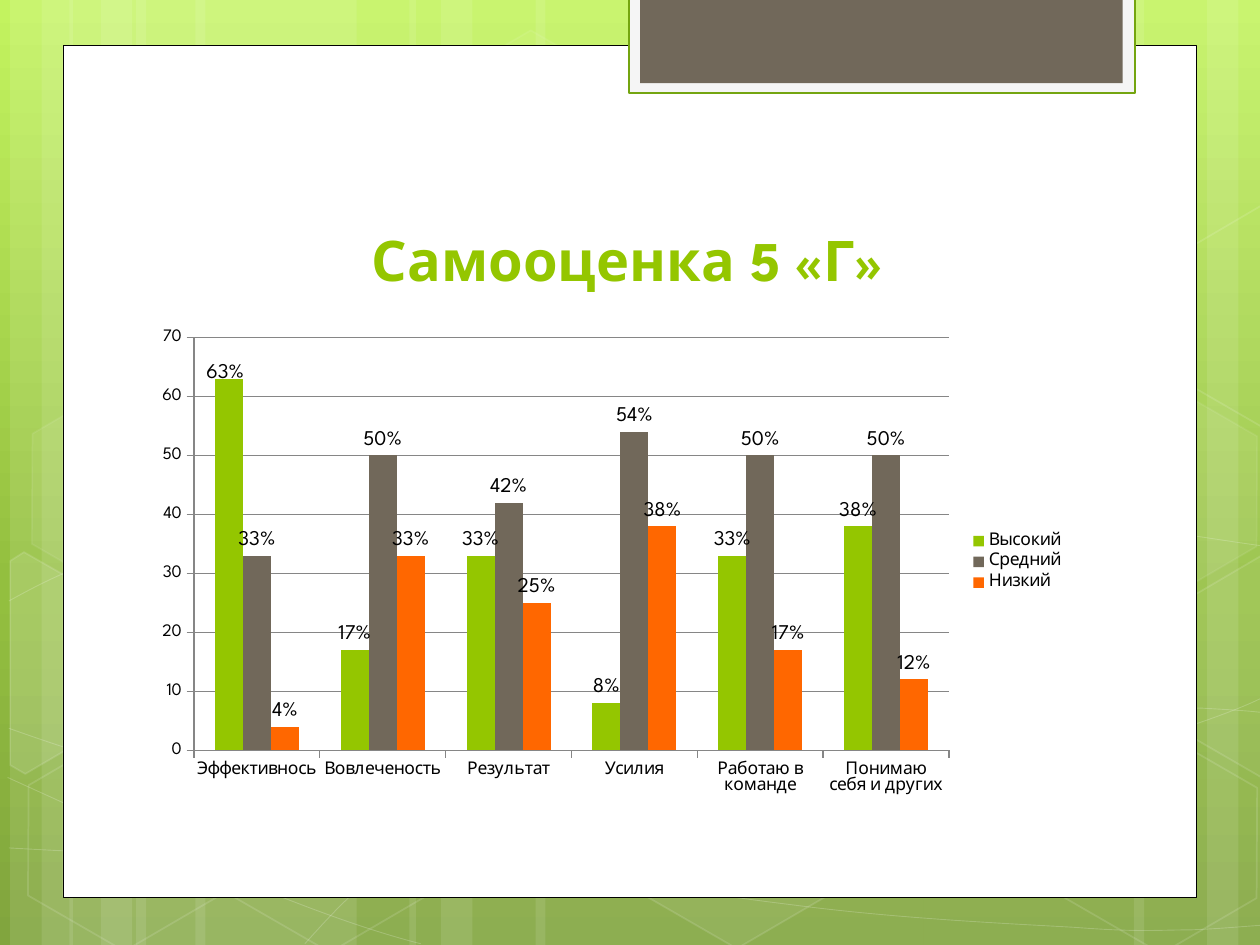
"""Build the class 5 «Г» self-assessment slide with its clustered column chart."""
import dataclasses
import math
import typing

import lxml.etree
import pptx
import pptx.chart.data
import pptx.dml.color
import pptx.enum.chart
import pptx.enum.shapes
import pptx.enum.text
import pptx.oxml.ns
import pptx.util

Inches = pptx.util.Inches
RGBColor = pptx.dml.color.RGBColor
ShapeKind = pptx.enum.shapes.MSO_SHAPE
qn = pptx.oxml.ns.qn

WHITE = RGBColor(0xFF, 0xFF, 0xFF)
BLACK = RGBColor(0, 0, 0)
GREEN = RGBColor(0x94, 0xC6, 0x00)
BROWN = RGBColor(0x71, 0x68, 0x5A)
ORANGE = RGBColor(0xFF, 0x67, 0x00)
FRAME_GREY = RGBColor(0xF5, 0xF5, 0xF5)
FRAME_GREEN = RGBColor(0x74, 0xA5, 0x10)
GRID_GREY = RGBColor(0x86, 0x86, 0x86)
BACKGROUND_STOPS = [(0, RGBColor(0xC3, 0xF3, 0x5F)), (62, RGBColor(0x93, 0xBF, 0x3F)), (100, RGBColor(0x81, 0xA5, 0x3E))]
FONT = "League Spartan"
TILT = 30
Point = tuple[float, float]


@dataclasses.dataclass(frozen=True)
class Style:
    fill: typing.Optional[RGBColor] = None
    fill_alpha: int = 100
    line: typing.Optional[RGBColor] = None
    line_width: float = 1
    line_alpha: int = 100


@dataclasses.dataclass(frozen=True)
class Hexagon:
    left: float
    top: float
    fill_alpha: int
    line_alpha: int


@dataclasses.dataclass(frozen=True)
class Cutoff:
    centre: Point
    points: list[Point]
    fill_alpha: int


@dataclasses.dataclass(frozen=True)
class Level:
    name: str
    values: list[int]
    colour: RGBColor


STRIPES = [(1.08, 1.75), (0.08, 0.5), (0.33, 0.83), (1.55, 1.75), (0.55, 0.5), (0.8, 0.83),
           (7.33, 1.75), (9.58, 0.5), (9, 0.83), (4.25, 3.08), (3.25, 0.5), (3.5, 0.83)]
CURVES = [
    [(0.07, 6.73), (0.61, 6.76), (1.15, 6.79), (1.9, 6.78), (2.65, 6.77), (3.58, 6.75), (4.58, 6.65),
     (5.58, 6.55), (7, 6.36), (7.92, 6.17), (8.83, 5.98), (9.77, 5.68), (10.07, 5.51)],
    [(0.07, 4.77), (0.36, 4.61), (0.65, 4.46), (1.21, 4.31), (1.78, 4.16), (2.59, 3.94), (3.47, 3.87),
     (4.36, 3.8), (5.44, 3.79), (6.54, 3.87), (7.64, 3.95), (9.47, 4.26), (10.07, 4.34)],
    [(0.06, 6.17), (1.27, 6.72), (2.47, 7.27), (3.34, 7.49)],
    [(0.07, 5.78), (0.38, 5.89), (0.7, 6), (1.28, 6.16), (1.86, 6.31), (2.73, 6.56), (3.57, 6.73),
     (4.4, 6.9), (5.45, 7.08), (6.28, 7.18), (7.11, 7.29), (8, 7.33), (8.53, 7.36),
     (9.05, 7.4), (9.19, 7.38), (9.45, 7.38), (9.71, 7.37), (9.89, 7.35), (10.07, 7.34)],
    [(2.42, 7.49), (2.6, 7.29), (2.78, 7.09), (3.02, 6.91), (3.26, 6.73), (3.6, 6.53), (3.88, 6.39),
     (4.16, 6.25), (4.33, 6.19), (4.7, 6.09), (5.06, 5.99), (5.73, 5.85), (6.08, 5.78),
     (6.44, 5.71), (6.49, 5.71), (6.8, 5.69), (7.11, 5.66), (7.6, 5.63), (7.94, 5.62),
     (8.29, 5.61), (8.86, 5.62), (8.86, 5.62), (9.08, 5.62), (9.31, 5.62), (9.53, 5.62),
     (9.71, 5.63), (9.88, 5.64), (9.97, 5.65), (10.06, 5.66), (10.03, 5.65), (10.06, 5.66)],
]
HEXAGONS = [
    Hexagon(3.34, 0.36, 4, 8), Hexagon(4.97, 5.89, 6, 12), Hexagon(0.11, 5.91, 0, 12),
    Hexagon(0.14, 3.12, 7, 8), Hexagon(1.74, 5.92, 0, 12), Hexagon(7.53, 4.53, 10, 12),
    Hexagon(8.34, 5.93, 0, 12), Hexagon(8.34, 3.14, 7, 8),
]
CUTOFFS = [
    Cutoff((0.36, 5.35), [(0.08, 4.45), (0.19, 4.38), (0.96, 4.82), (0.95, 5.7), (0.2, 6.14), (0.08, 6.07)], 10),
    Cutoff((9.85, 5.2), [(9.26, 4.85), (10.01, 4.41), (10.09, 4.46), (10.09, 6.13), (10.02, 6.17), (9.26, 5.73)], 4),
    Cutoff((9.85, 2.41), [(9.26, 2.07), (10.01, 1.63), (10.1, 1.68), (10.09, 3.35), (10.02, 3.39), (9.26, 2.95)], 0),
]
PANELS = [
    ((0.5, 0.36, 9, 6.76), Style(WHITE, line=BLACK, line_width=0.5)),
    ((4.99, -0.02, 4.02, 0.76), Style(FRAME_GREY, line=FRAME_GREEN, line_width=1.25)),
    ((5.08, -0.02, 3.83, 0.68), Style(BROWN)),
]
CATEGORIES = ["Эффективнось", "Вовлеченость", "Результат", "Усилия", "Работаю в команде", "Понимаю себя и других"]
LEVELS = [
    Level("Высокий", [63, 17, 33, 8, 33, 38], GREEN),
    Level("Средний", [33, 50, 42, 54, 50, 50], BROWN),
    Level("Низкий", [4, 33, 25, 38, 17, 12], ORANGE),
]


def set_values(target: typing.Any, values: dict[str, typing.Any]) -> None:
    for name, value in values.items():
        setattr(target, name, value)


def set_alpha(parent: typing.Any, percent: int) -> None:
    if percent < 100:
        colour = parent.find(qn("a:solidFill")).find(qn("a:srgbClr"))
        lxml.etree.SubElement(colour, qn("a:alpha"), val=str(percent * 1000))


def apply_style(shape: typing.Any, style: Style) -> None:
    shape.shadow.inherit = False
    properties = shape._element.spPr
    if style.fill is None or style.fill_alpha == 0:
        shape.fill.background()
    else:
        shape.fill.solid()
        shape.fill.fore_color.rgb = style.fill
        set_alpha(properties, style.fill_alpha)
    if style.line is None:
        shape.line.fill.background()
    else:
        shape.line.color.rgb = style.line
        shape.line.width = pptx.util.Pt(style.line_width)
        set_alpha(properties.find(qn("a:ln")), style.line_alpha)


def add_preset(page: typing.Any, kind: typing.Any, place: tuple, style: Style) -> typing.Any:
    shape = page.shapes.add_shape(kind, *map(Inches, place))
    apply_style(shape, style)
    return shape


def add_outline(page: typing.Any, points: list[Point], closed: bool, style: Style) -> typing.Any:
    start, *others = [(Inches(x), Inches(y)) for x, y in points]
    builder = page.shapes.build_freeform(*start)
    builder.add_line_segments(others, close=closed)
    shape = builder.convert_to_shape()
    apply_style(shape, style)
    return shape


def add_curve(page: typing.Any, controls: list[Point], style: Style) -> None:
    shape = add_outline(page, controls, False, style)
    segments = list(shape._element.iter(qn("a:lnTo")))
    outline = segments[0].getparent()
    for first in range(0, len(segments), 3):
        curve = lxml.etree.SubElement(outline, qn("a:cubicBezTo"))
        for segment in segments[first:first + 3]:
            curve.append(segment[0])
            outline.remove(segment)


def turn_back(point: Point, centre: Point) -> Point:
    cosine, sine = math.cos(math.radians(TILT)), math.sin(math.radians(TILT))
    x, y = point[0] - centre[0], point[1] - centre[1]
    return centre[0] + x * cosine + y * sine, centre[1] - x * sine + y * cosine


def add_background(page: typing.Any) -> None:
    fill = page.background.fill
    fill.gradient()
    fill.gradient_angle = 270
    stops = next(page._element.iter(qn("a:gsLst")))
    stops.clear()
    for position, colour in BACKGROUND_STOPS:
        stop = lxml.etree.SubElement(stops, qn("a:gs"), pos=str(position * 1000))
        lxml.etree.SubElement(stop, qn("a:srgbClr"), val=str(colour))


def add_decoration(page: typing.Any) -> None:
    for left, width in STRIPES:
        add_preset(page, ShapeKind.RECTANGLE, (left, 0, width, 7.5), Style(WHITE, 10))
    for controls in CURVES:
        add_curve(page, controls, Style(line=WHITE, line_width=0.5, line_alpha=20))
    for item in HEXAGONS:
        style = Style(WHITE, item.fill_alpha, WHITE, 1, item.line_alpha)
        hexagon = add_preset(page, ShapeKind.HEXAGON, (item.left, item.top, 1.75, 1.52), style)
        hexagon.rotation = TILT
        hexagon.adjustments[0] = 0.285
    for item in CUTOFFS:
        points = [turn_back(point, item.centre) for point in item.points]
        add_outline(page, points, True, Style(WHITE, item.fill_alpha, WHITE, 1, 12)).rotation = TILT
    for place, style in PANELS:
        add_preset(page, ShapeKind.RECTANGLE, place, style)


def add_title(page: typing.Any) -> None:
    frame = page.shapes.add_textbox(*map(Inches, (1.14, 1.12, 7.68, 1.25))).text_frame
    set_values(frame, {"word_wrap": True, "vertical_anchor": pptx.enum.text.MSO_ANCHOR.BOTTOM})
    para = frame.paragraphs[0]
    para.alignment = pptx.enum.text.PP_ALIGN.CENTER
    span = para.add_run()
    span.text = "Самооценка 5 «Г»"
    set_values(span.font, {"name": FONT, "size": pptx.util.Pt(32), "bold": True})
    span.font.color.rgb = GREEN


def shift_first_label(series: typing.Any, x: float, y: float) -> None:
    layout = lxml.etree.Element(qn("c:layout"))
    manual = lxml.etree.SubElement(layout, qn("c:manualLayout"))
    for axis, distance in (("c:x", x), ("c:y", y)):
        lxml.etree.SubElement(manual, qn(axis), val=str(distance))
    next(series._element.iter(qn("c:dLbl"))).insert(1, layout)


def add_labels(series: typing.Any, values: list[int]) -> None:
    set_values(series.data_labels, {"show_value": True})
    set_values(series.data_labels.font, {"size": pptx.util.Pt(12), "bold": True})
    for index, value in enumerate(values):
        label = series.points[index].data_label
        span = label.text_frame.paragraphs[0].add_run()
        span.text = f"{value}%"
        set_values(span.font, {"name": FONT, "size": pptx.util.Pt(12), "bold": False})
        label.position = pptx.enum.chart.XL_LABEL_POSITION.OUTSIDE_END


def add_level_chart(page: typing.Any) -> None:
    data = pptx.chart.data.CategoryChartData()
    data.categories = CATEGORIES
    for level in LEVELS:
        data.add_series(level.name, level.values)
    place = map(Inches, (1.14, 2.54, 7.41, 3.84))
    chart = page.shapes.add_chart(pptx.enum.chart.XL_CHART_TYPE.COLUMN_CLUSTERED, *place, data).chart
    set_values(chart, {"has_title": False, "has_legend": True})
    set_values(chart.font, {"name": FONT, "size": pptx.util.Pt(10)})
    chart.font.color.rgb = BLACK
    set_values(chart.legend, {"position": pptx.enum.chart.XL_LEGEND_POSITION.RIGHT, "include_in_layout": False})
    for axis in (chart.category_axis, chart.value_axis):
        axis.major_tick_mark = pptx.enum.chart.XL_TICK_MARK.OUTSIDE
        axis.format.line.color.rgb = GRID_GREY
    chart.value_axis.major_gridlines.format.line.color.rgb = GRID_GREY
    plot = chart.plots[0]
    set_values(plot, {"gap_width": 150, "overlap": 0, "vary_by_categories": False})
    for series, level in zip(plot.series, LEVELS):
        series.format.fill.solid()
        series.format.fill.fore_color.rgb = level.colour
        add_labels(series, level.values)
    shift_first_label(plot.series[0], -0.004, 0.02)


def main() -> None:
    deck = pptx.Presentation()
    set_values(deck, {"slide_width": Inches(10), "slide_height": Inches(7.5)})
    page = deck.slides.add_slide(deck.slide_layouts[6])
    add_background(page)
    add_decoration(page)
    add_title(page)
    add_level_chart(page)
    deck.save("out.pptx")


if __name__ == "__main__":
    main()
